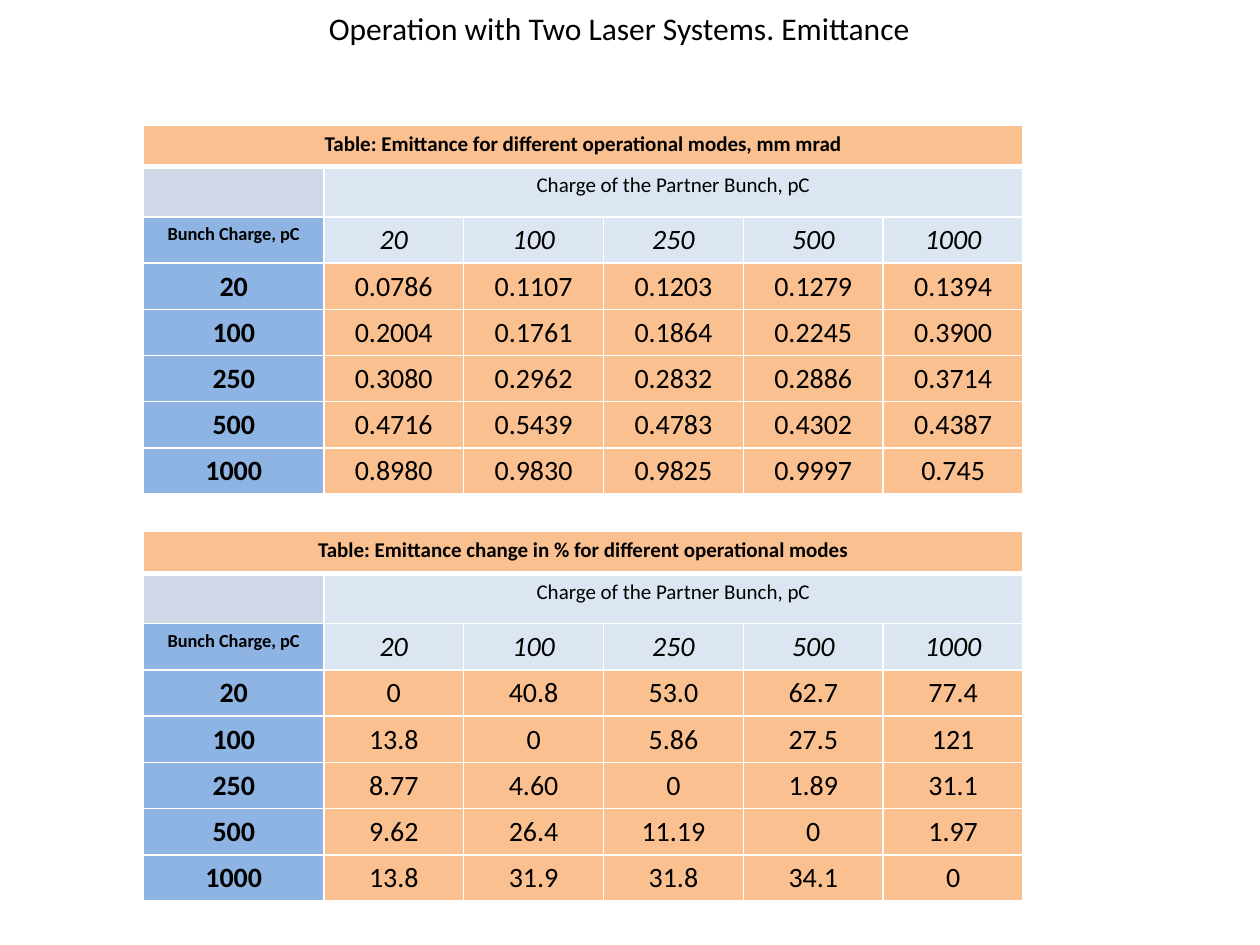
from dataclasses import dataclass

from lxml import etree
from pptx import Presentation
from pptx.dml.color import RGBColor
from pptx.enum.text import MSO_ANCHOR, MSO_AUTO_SIZE, PP_ALIGN
from pptx.oxml.ns import qn
from pptx.util import Inches, Pt

CENTER, LEFT = PP_ALIGN.CENTER, PP_ALIGN.LEFT
TOP = MSO_ANCHOR.TOP
FIT_SHAPE = MSO_AUTO_SIZE.SHAPE_TO_FIT_TEXT
TITLE_ONLY = 5


@dataclass(frozen=True)
class Theme:
    font: str = "Calibri"
    ink: str = "000000"
    border: str = "FFFFFF"
    orange: str = "FAC090"
    blue: str = "8EB4E3"
    pale: str = "DCE6F2"
    blank: str = "D0D8E8"
    title_size: float = 18
    caption_size: float = 12
    label_size: float = 10.5
    value_size: float = 16


THEME = Theme()

# Table grid, in inches
TABLE_LEFT, TABLE_HEIGHT = 1.14, 2.93
TABLE_TOPS = (0.99, 4.22)
COLUMN_WIDTHS = [1.43] + [1.11] * 5
ROW_HEIGHTS = [0.33] * 3 + [0.3] * 5

CHARGES = ["20", "100", "250", "500", "1000"]
TABLES = [
    ("Table: Emittance for different operational modes, mm mrad", [
        ["0.0786", "0.1107", "0.1203", "0.1279", "0.1394"],
        ["0.2004", "0.1761", "0.1864", "0.2245", "0.3900"],
        ["0.3080", "0.2962", "0.2832", "0.2886", "0.3714"],
        ["0.4716", "0.5439", "0.4783", "0.4302", "0.4387"],
        ["0.8980", "0.9830", "0.9825", "0.9997", "0.745"],
    ]),
    ("Table: Emittance change in % for different operational modes", [
        ["0", "40.8", "53.0", "62.7", "77.4"],
        ["13.8", "0", "5.86", "27.5", "121"],
        ["8.77", "4.60", "0", "1.89", "31.1"],
        ["9.62", "26.4", "11.19", "0", "1.97"],
        ["13.8", "31.9", "31.8", "34.1", "0"],
    ]),
]


def format_text(para, size, align, bold=False, italic=False):
    para.alignment = align
    for span in para.runs:
        span.font.name = THEME.font
        span.font.size = Pt(size)
        span.font.bold = bold
        span.font.italic = italic
        span.font.color.rgb = RGBColor.from_string(THEME.ink)


def set_borders(cell, bottom):
    properties = cell._tc.get_or_add_tcPr()
    for side, width in (("L", 1), ("R", 1), ("T", 1), ("B", bottom)):
        line = etree.SubElement(properties, qn(f"a:ln{side}"), w=str(Pt(width)))
        fill = etree.SubElement(line, qn("a:solidFill"))
        etree.SubElement(fill, qn("a:srgbClr"), val=THEME.border)


def paint_cell(cell, color, bottom=1):
    set_borders(cell, bottom)
    cell.fill.solid()
    cell.fill.fore_color.rgb = RGBColor.from_string(color)


def write_cell(cell, text, size, **style):
    cell.text_frame.text = text
    format_text(cell.text_frame.paragraphs[0], size, CENTER, **style)


def add_title(page, text):
    box = page.shapes.title
    box.left, box.top, box.width, box.height = map(Inches, (2.51, 0.02, 4.87, 0.4))
    frame = box.text_frame
    frame.text = text
    frame.word_wrap = False
    frame.auto_size = FIT_SHAPE
    frame.vertical_anchor = TOP
    format_text(frame.paragraphs[0], THEME.title_size, LEFT)


def add_emittance_table(page, top, caption, values):
    box = page.shapes.add_table(
        len(ROW_HEIGHTS), len(COLUMN_WIDTHS), Inches(TABLE_LEFT), Inches(top),
        Inches(sum(COLUMN_WIDTHS)), Inches(TABLE_HEIGHT))
    table = box.table
    for column, width in zip(table.columns, COLUMN_WIDTHS):
        column.width = Inches(width)
    for row, height in zip(table.rows, ROW_HEIGHTS):
        row.height = Inches(height)
    box.height = Inches(TABLE_HEIGHT)

    # Fills and borders: caption, partner heading, charges, then values
    first_fills = [THEME.orange, THEME.blank] + [THEME.blue] * 6
    other_fills = [THEME.orange] + [THEME.pale] * 2 + [THEME.orange] * 5
    for row, (first, other) in enumerate(zip(first_fills, other_fills)):
        for column in range(len(COLUMN_WIDTHS)):
            paint_cell(table.cell(row, column), other if column else first,
                       bottom=1 if row else 3)

    # Headings across several columns
    last = len(COLUMN_WIDTHS) - 1
    table.cell(0, 0).merge(table.cell(0, last))
    table.cell(1, 1).merge(table.cell(1, last))
    write_cell(table.cell(0, 0), caption, THEME.caption_size, bold=True)
    write_cell(table.cell(1, 1), "Charge of the Partner Bunch, pC", THEME.caption_size)
    write_cell(table.cell(2, 0), "Bunch Charge, pC", THEME.label_size, bold=True)

    # Charges on both axes and the values between them
    for index, (charge, line) in enumerate(zip(CHARGES, values)):
        write_cell(table.cell(2, index + 1), charge, THEME.value_size, italic=True)
        write_cell(table.cell(index + 3, 0), charge, THEME.value_size, bold=True)
        for column, value in enumerate(line, start=1):
            write_cell(table.cell(index + 3, column), value, THEME.value_size)


def main():
    deck = Presentation()
    deck.slide_width, deck.slide_height = Inches(10), Inches(7.5)
    page = deck.slides.add_slide(deck.slide_layouts[TITLE_ONLY])
    add_title(page, "Operation with Two Laser Systems. Emittance")
    for top, (caption, values) in zip(TABLE_TOPS, TABLES):
        add_emittance_table(page, top, caption, values)
    deck.save("out.pptx")


if __name__ == "__main__":
    main()
